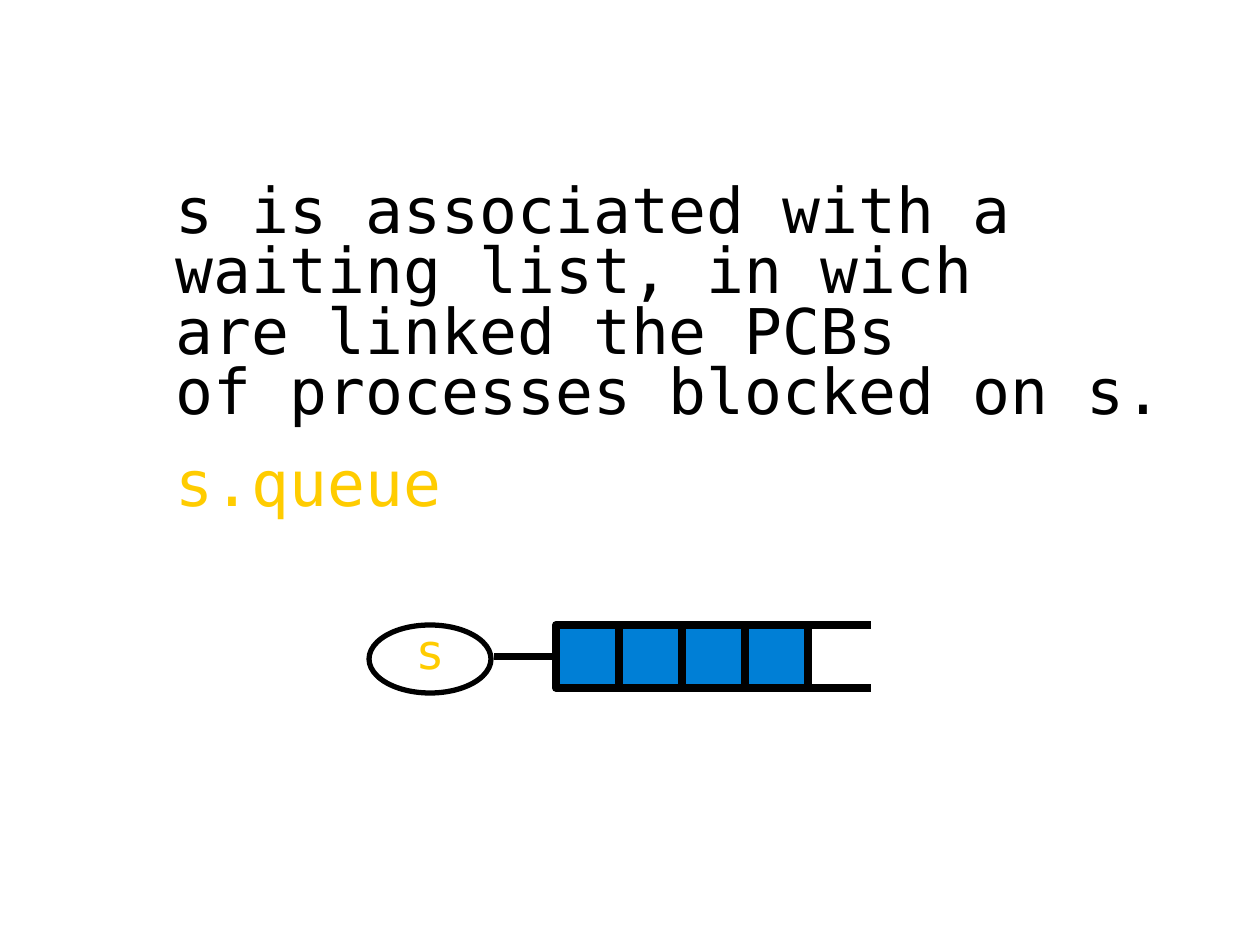
from dataclasses import dataclass

from pptx import Presentation
from pptx.dml.color import RGBColor
from pptx.enum.shapes import MSO_CONNECTOR, MSO_SHAPE
from pptx.enum.text import MSO_ANCHOR, PP_ALIGN
from pptx.oxml.ns import qn
from pptx.oxml.xmlchemy import OxmlElement
from pptx.util import Emu, Pt

PX = 914400 / 126
FONT = "DejaVu Sans Mono"
COLORS = {"ink": "000000", "accent": "FFCC00", "cell": "007FD6"}


@dataclass
class Box:
    left: int
    top: int
    width: int
    height: int


def px(length: int) -> Emu:
    return Emu(round(length * PX))


def place(box: Box) -> tuple:
    return px(box.left), px(box.top), px(box.width), px(box.height)


def color(name: str) -> RGBColor:
    return RGBColor.from_string(COLORS[name])


def write(para, text: str, *, size: int, ink: str, spacing: float, align=PP_ALIGN.LEFT) -> None:
    para.text = text
    para.alignment = align
    para.line_spacing = spacing
    para.space_before = Pt(size / 2)
    for span in para.runs:
        span.font.name = FONT
        span.font.size = Pt(size)
        span.font.color.rgb = color(ink)


def add_outlined(page, kind, box: Box, line_width: float, fill: str = ""):
    shape = page.shapes.add_shape(kind, *place(box))
    shape.shadow.inherit = False
    if fill:
        shape.fill.solid()
        shape.fill.fore_color.rgb = color(fill)
    else:
        shape.fill.background()
    shape.line.color.rgb = color("ink")
    shape.line.width = Pt(line_width)
    return shape


def add_line(page, x1: int, y1: int, x2: int, y2: int):
    line = page.shapes.add_connector(MSO_CONNECTOR.STRAIGHT, px(x1), px(y1), px(x2), px(y2))
    line.line.color.rgb = color("ink")
    line.line.width = Pt(4.5)
    line._element.find(qn("p:spPr")).append(OxmlElement("a:effectLst"))
    return line


def main() -> None:
    deck = Presentation()
    deck.slide_width, deck.slide_height = px(1260), px(945)
    page = deck.slides.add_slide(deck.slide_layouts[6])

    # Explanation
    frame = page.shapes.add_textbox(*place(Box(174, 179, 1060, 354))).text_frame
    frame.word_wrap = True
    frame.margin_left = frame.margin_right = px(2)
    write(frame.paragraphs[0],
          "s is associated with a waiting list, in wich \n"
          "are linked the PCBs \nof processes blocked on s.",
          size=36, ink="ink", spacing=0.8)
    write(frame.add_paragraph(), "s.queue", size=36, ink="accent", spacing=0.8)

    # Semaphore
    semaphore = add_outlined(page, MSO_SHAPE.OVAL, Box(369, 625, 122, 68), 3)
    semaphore.text_frame.vertical_anchor = MSO_ANCHOR.MIDDLE
    write(semaphore.text_frame.paragraphs[0], "s",
          size=28, ink="accent", spacing=0.6, align=PP_ALIGN.CENTER)

    # Queue of blocked processes
    left, top, side, count = 556, 625, 63, 4
    cells = [add_outlined(page, MSO_SHAPE.RECTANGLE,
                          Box(left + i * side, top, side, side), 4.5, "cell")
             for i in range(count)]

    # Link from the queue to the semaphore
    link = add_line(page, left, top + side // 2, 494, top + side // 2)
    link.begin_connect(cells[0], 1)
    link.end_y = link.begin_y

    # Open end of the queue
    end = left + count * side
    for y in (top, top + side):
        add_line(page, end + side, y, end, y)

    deck.save("out.pptx")


if __name__ == "__main__":
    main()
